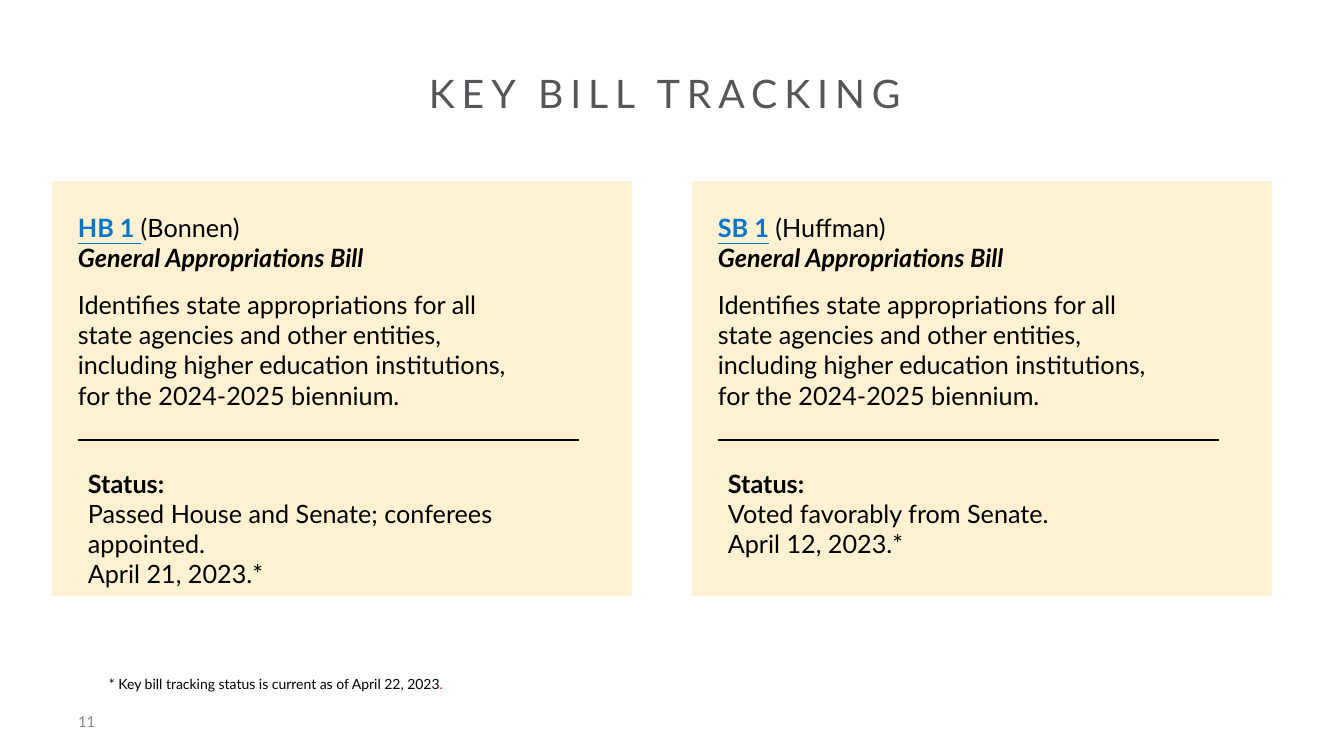
import pptx
import pptx.dml.color
import pptx.enum.shapes
import pptx.enum.text
import pptx.oxml.ns
import pptx.util
from lxml import etree

TITLE = "KEY BILL TRACKING "
SUMMARY = (
    "Identifies state appropriations for all\nstate agencies and other entities,\n"
    "including higher education institutions,\nfor the 2024-2025 biennium."
)
BILLS = [
    dict(number="HB 1 ", sponsor="(Bonnen)", name="General Appropriations Bill",
         status="Passed House and Senate; conferees appointed.",
         date="April 21, 2023.*", status_size=(530, 132)),
    dict(number="SB 1", sponsor=" (Huffman)", name="General Appropriations Bill",
         status="Voted favorably from Senate.",
         date="April 12, 2023.*", status_size=(351, 102)),
]
FOOTNOTE = "* Key bill tracking status is current as of April 22, 2023"
PAGE = "11"

THEME = dict(
    font="Lato", page_font="Calibri",
    text="000000", title="555659", bill="0075C9", card="FFF1D1",
    alert="FF0000", page="8C8C8C",
    title_size=28, body_size=18, page_size=12, note_size=10,
)
PX_PER_INCH = 100.8
CARD_LEFT, CARD_TOP, CARD_W, CARD_H = 52, 181, 580, 415
CARD_STEP = 640
SHAPES = pptx.enum.shapes
TEXT = pptx.enum.text


def px(n):
    return pptx.util.Emu(round(n * 914400 / PX_PER_INCH))


def rgb(name):
    return pptx.dml.color.RGBColor.from_string(THEME[name])


def write(p, text, size="body_size", color="text", font="font",
          bold=False, italic=False, underline=False, spacing=None):
    """Append text to a paragraph, turning each newline into a line break."""
    for i, line in enumerate(text.split("\n")):
        if i:
            p.add_line_break()
        if not line:
            continue
        r = p.add_run()
        r.text = line
        f = r.font
        f.name, f.size = THEME[font], pptx.util.Pt(THEME[size])
        f.bold, f.italic, f.underline = bold, italic, underline
        f.color.rgb = rgb(color)
        if spacing:
            f._element.set("spc", str(spacing * 100))


def add_text_box(s, x, y, w, h, wrap=True, fit=True):
    tf = s.shapes.add_textbox(px(x), px(y), px(w), px(h)).text_frame
    tf.word_wrap = wrap
    tf.auto_size = (TEXT.MSO_AUTO_SIZE.SHAPE_TO_FIT_TEXT if fit
                    else TEXT.MSO_AUTO_SIZE.NONE)
    return tf


def add_title(s):
    sp = s.shapes.title
    sp.left, sp.top, sp.width, sp.height = px(68), px(70), px(1211), px(57)
    tf = sp.text_frame
    tf.auto_size = TEXT.MSO_AUTO_SIZE.NONE
    tf.vertical_anchor = TEXT.MSO_ANCHOR.TOP
    p = tf.paragraphs[0]
    p.alignment = TEXT.PP_ALIGN.CENTER
    p.line_spacing = 0.9
    write(p, TITLE, size="title_size", color="title", spacing=5)


def add_card(s, x, bill):
    card = s.shapes.add_shape(SHAPES.MSO_SHAPE.RECTANGLE,
                              px(x), px(CARD_TOP), px(CARD_W), px(CARD_H))
    card.shadow.inherit = False
    card.fill.solid()
    card.fill.fore_color.rgb = rgb("card")
    card.line.fill.background()

    tf = add_text_box(s, x + 16, CARD_TOP + 26, 462, 211, wrap=False)
    p = tf.paragraphs[0]
    write(p, bill["number"], color="bill", bold=True, underline=True)
    write(p, bill["sponsor"] + "\n")
    write(p, bill["name"], bold=True, italic=True)
    p = tf.add_paragraph()
    p.space_before = pptx.util.Pt(12)
    write(p, SUMMARY)

    tf = add_text_box(s, x + 26, CARD_TOP + 282, *bill["status_size"])
    p = tf.paragraphs[0]
    write(p, "Status:\n", bold=True)
    write(p, bill["status"])
    write(tf.add_paragraph(), bill["date"])

    y = CARD_TOP + 259
    rule = s.shapes.add_connector(SHAPES.MSO_CONNECTOR.STRAIGHT,
                                  px(x + 26), px(y), px(x + 527), px(y))
    rule.line.color.rgb = rgb("text")
    rule.line.width = pptx.util.Pt(1.5)
    etree.SubElement(rule._element.spPr, pptx.oxml.ns.qn("a:effectLst"))


def main():
    prs = pptx.Presentation()
    prs.slide_width, prs.slide_height = px(1344), px(756)
    s = prs.slides.add_slide(prs.slide_layouts[5])
    add_title(s)
    for i, bill in enumerate(BILLS):
        add_card(s, CARD_LEFT + i * CARD_STEP, bill)

    p = add_text_box(s, 99, 671, 640, 27).paragraphs[0]
    write(p, FOOTNOTE, size="note_size")
    write(p, ".", size="note_size", color="alert")

    tf = add_text_box(s, 68, 701, 302, 40, fit=False)
    tf.vertical_anchor = TEXT.MSO_ANCHOR.MIDDLE
    write(tf.paragraphs[0], PAGE, size="page_size", color="page", font="page_font")
    prs.save("out.pptx")


if __name__ == "__main__":
    main()
